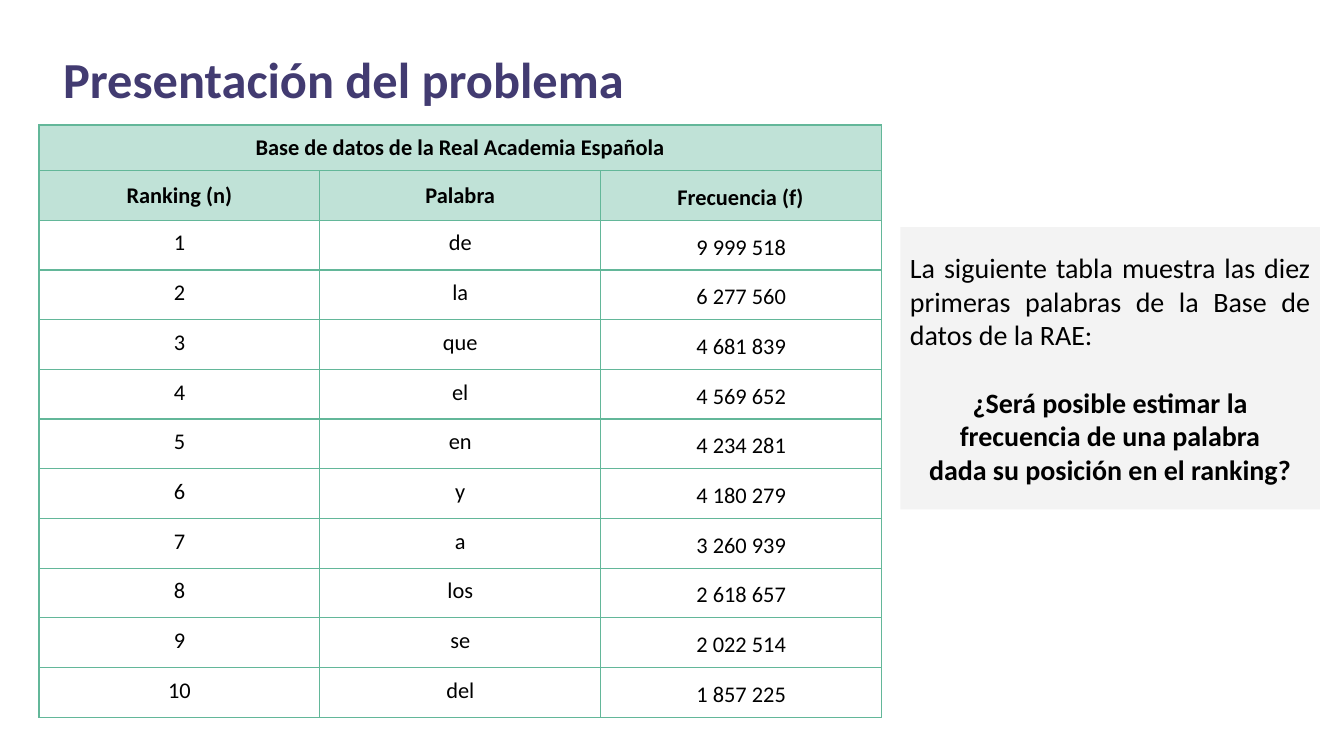
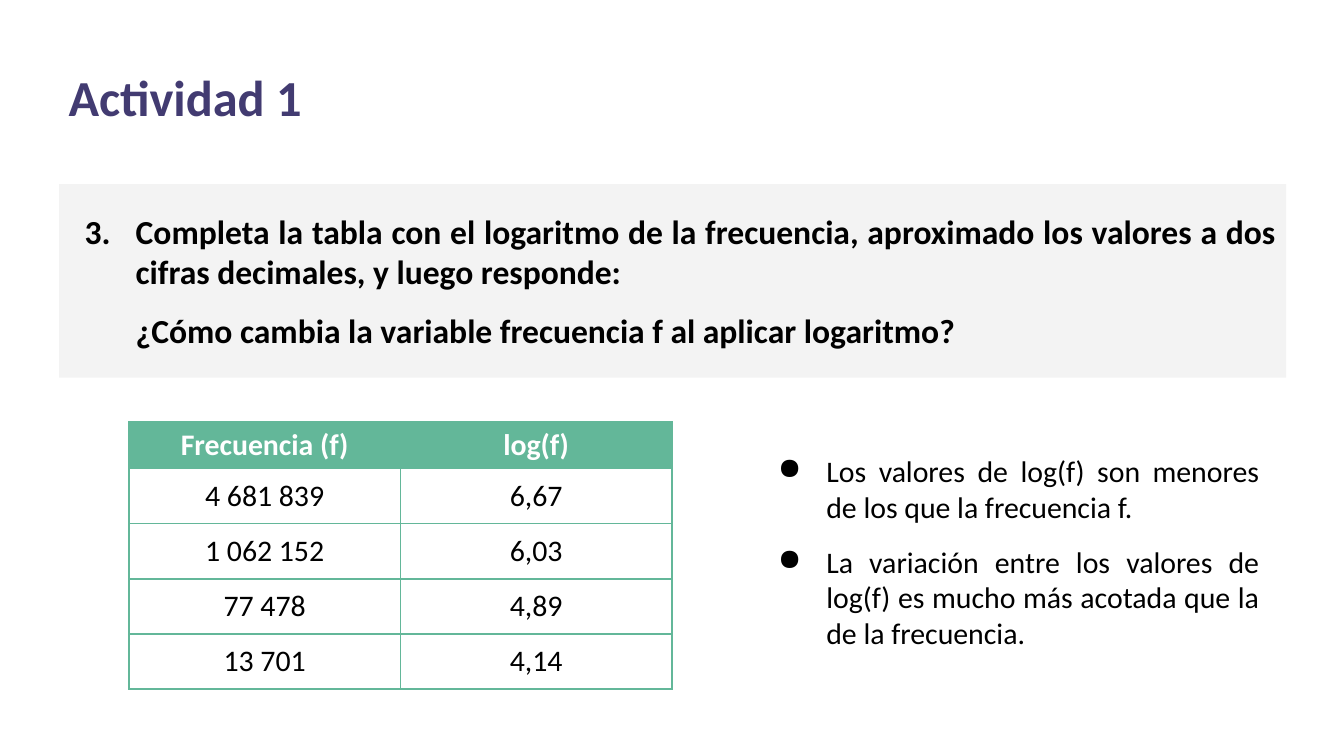
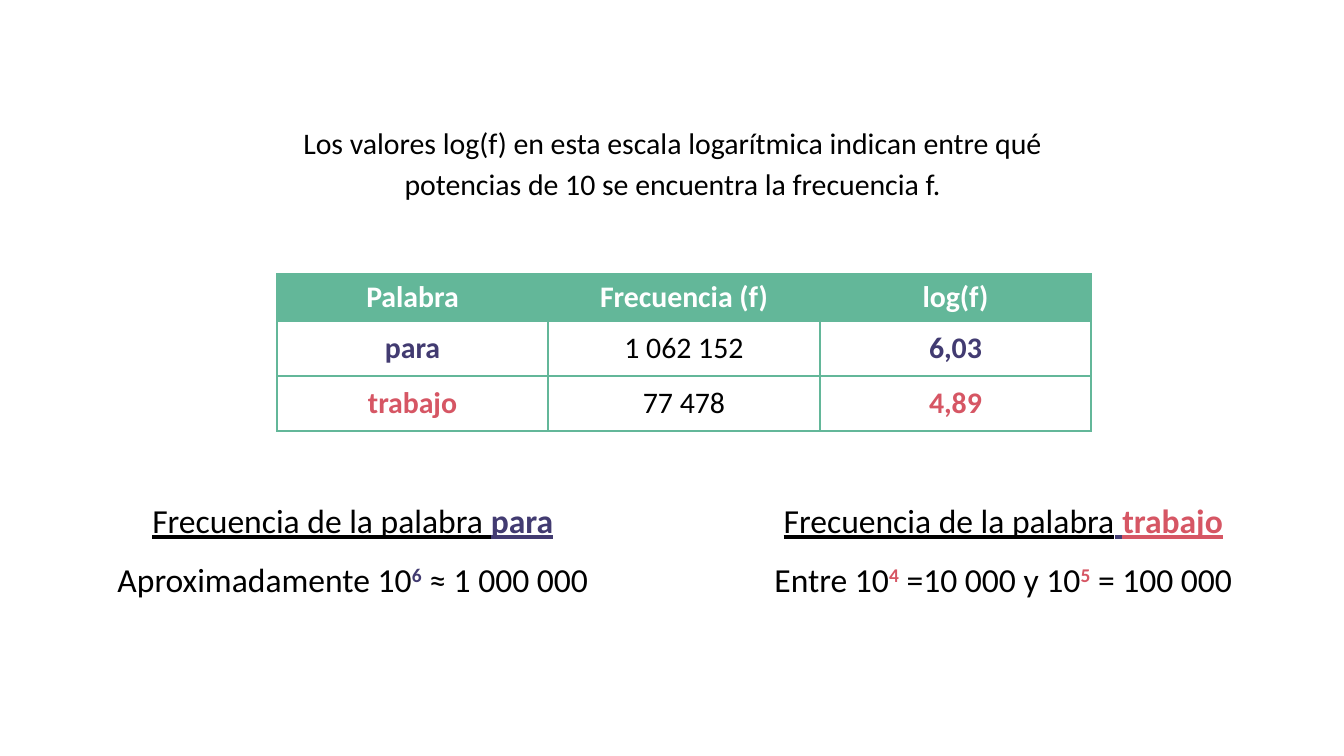
from dataclasses import dataclass
from typing import Optional

from lxml.etree import SubElement
from pptx import Presentation
from pptx.dml.color import RGBColor
from pptx.enum.shapes import MSO_SHAPE as Shape
from pptx.enum.text import MSO_ANCHOR as Anchor, MSO_AUTO_SIZE as AutoSize, PP_ALIGN as Align
from pptx.oxml.ns import qn
from pptx.util import Inches, Pt

# Shared look
COLORS = {
    "ink": "000000", "white": "FFFFFF", "panel": "F3F3F3", "purple": "423B71",
    "red": "D65664", "green": "63B799", "mint": "C0E2D7",
}
FONT = "Calibri"

# Square grid: 100 columns across a 16:9 slide
SLIDE_WIDTH = Inches(10)
SLIDE_HEIGHT = SLIDE_WIDTH * 9 // 16
GRID = SLIDE_WIDTH // 100


def grid(steps: float) -> int:
    return round(steps * GRID)


@dataclass(frozen=True)
class Area:
    left: float
    top: float
    width: float
    height: float

    def lengths(self) -> list[int]:
        return [grid(steps) for steps in (self.left, self.top, self.width, self.height)]


@dataclass(frozen=True)
class Span:
    text: str
    color: str = "ink"
    bold: bool = False
    underline: bool = False
    raised: bool = False


@dataclass(frozen=True)
class Para:
    spans: tuple[Span, ...]
    size: float
    align: Align = Align.LEFT
    before: float = 0
    after: float = 0
    line: Optional[float] = None
    indent: float = 0
    hanging: float = 0
    bullet: Optional[str] = None
    number: Optional[int] = None


@dataclass(frozen=True)
class Cell:
    para: Para
    fill: Optional[str] = None
    anchor: Anchor = Anchor.MIDDLE


@dataclass(frozen=True)
class TableStyle:
    column: float
    first_row: float
    other_rows: float
    margins: tuple[float, float]
    border: float


RANKING_STYLE = TableStyle(20.9, 2.7, 2.9, (0.7, 0.7), 0.75)
LOG_STYLE = TableStyle(20.2, 3.4, 4.1, (0.8, 0.4), 1)


def rgb(name: str) -> RGBColor:
    return RGBColor.from_string(COLORS[name])


# Text
def add_marker(para, content: Para) -> None:
    props = para._p.get_or_add_pPr()
    props.set("marL", str(grid(content.indent)))
    props.set("indent", str(-grid(content.hanging)))
    if content.bullet or content.number:
        tint = SubElement(props, qn("a:buClr"))
        SubElement(tint, qn("a:srgbClr"), val=COLORS["ink"])
    if content.bullet:
        SubElement(props, qn("a:buChar"), char=content.bullet)
    elif content.number:
        SubElement(props, qn("a:buAutoNum"), type="arabicPeriod", startAt=str(content.number))


def write_para(para, content: Para) -> None:
    add_marker(para, content)
    para.alignment = content.align
    para.space_before, para.space_after = Pt(content.before), Pt(content.after)
    if content.line:
        para.line_spacing = content.line
    para.text = content.spans[0].text
    for span in content.spans[1:]:
        para.add_run().text = span.text
    for run, span in zip(para.runs, content.spans):
        font = run.font
        font.name, font.size = FONT, Pt(content.size)
        font.bold, font.underline = span.bold, span.underline
        font.color.rgb = rgb(span.color)
        if span.raised:
            run._r.get_or_add_rPr().set("baseline", "30000")


def write_frame(frame, contents: list[Para], margins: tuple[float, float]) -> None:
    frame.word_wrap = True
    frame.margin_left = frame.margin_right = grid(margins[0])
    frame.margin_top = frame.margin_bottom = grid(margins[1])
    for index, content in enumerate(contents):
        write_para(frame.add_paragraph() if index else frame.paragraphs[0], content)


def add_text(page, area: Area, contents: list[Para], margins: tuple[float, float] = (1, 1)) -> None:
    box = page.shapes.add_textbox(*area.lengths())
    write_frame(box.text_frame, contents, margins)
    box.text_frame.auto_size = AutoSize.SHAPE_TO_FIT_TEXT


def add_title(page, left: float, top: float, text: str) -> None:
    title = Para((Span(text, "purple", bold=True),), 27)
    add_text(page, Area(left, top, 67, 5.3), [title], (0.7, 0.4))


def add_panel(page, area: Area, contents: list[Para]) -> None:
    panel = page.shapes.add_shape(Shape.RECTANGLE, *area.lengths())
    panel.shadow.inherit = False
    panel.fill.solid()
    panel.fill.fore_color.rgb = rgb("panel")
    panel.line.fill.background()
    write_frame(panel.text_frame, contents, (0.7, 0.7))
    panel.text_frame.vertical_anchor = Anchor.MIDDLE


# Tables
def add_borders(cell, width: float) -> None:
    props = cell._tc.get_or_add_tcPr()
    for side in ("lnL", "lnR", "lnT", "lnB"):
        line = SubElement(props, qn(f"a:{side}"), w=str(Pt(width)))
        fill = SubElement(line, qn("a:solidFill"))
        SubElement(fill, qn("a:srgbClr"), val=COLORS["green"])


def add_table(page, left: float, top: float, rows: list[list[Optional[Cell]]], style: TableStyle):
    count = len(rows[0])
    height = style.first_row + style.other_rows * (len(rows) - 1)
    area = Area(left, top, style.column * count, height)
    table = page.shapes.add_table(len(rows), count, *area.lengths()).table
    table.first_row = table.horz_banding = False
    for column in table.columns:
        column.width = grid(style.column)
    for r, row in enumerate(rows):
        table.rows[r].height = grid(style.other_rows if r else style.first_row)
        for c, content in enumerate(row):
            cell = table.cell(r, c)
            add_borders(cell, style.border)
            if content is None:
                continue
            if content.fill:
                cell.fill.solid()
                cell.fill.fore_color.rgb = rgb(content.fill)
            else:
                cell.fill.background()
            cell.vertical_anchor = content.anchor
            cell.margin_left = cell.margin_right = grid(style.margins[0])
            cell.margin_top = cell.margin_bottom = grid(style.margins[1])
            write_para(cell.text_frame.paragraphs[0], content.para)
    return table


def add_log_table(page, left: float, top: float, heads: list[str], body: list[list[Span]]) -> None:
    def centred(span: Span, fill: Optional[str] = None) -> Cell:
        return Cell(Para((span,), 16, Align.CENTER), fill)

    header = [centred(Span(head, "white", bold=True), "green") for head in heads]
    add_table(page, left, top, [header] + [[centred(span) for span in row] for row in body], LOG_STYLE)


# Slide 1: the problem and the ranking
WORDS = [
    ("de", "9 999 518"), ("la", "6 277 560"), ("que", "4 681 839"), ("el", "4 569 652"),
    ("en", "4 234 281"), ("y", "4 180 279"), ("a", "3 260 939"), ("los", "2 618 657"),
    ("se", "2 022 514"), ("del", "1 857 225"),
]


def ranking_head(text: str) -> Cell:
    return Cell(Para((Span(text, bold=True),), 12, Align.CENTER), "mint")


def ranking_value(text: str, line: Optional[float] = None) -> Cell:
    return Cell(Para((Span(text),), 12, Align.CENTER, line=line), anchor=Anchor.TOP)


def build_problem(page) -> None:
    intro = "La siguiente tabla muestra las diez primeras palabras de la Base de datos de la RAE:"
    question = Span("¿Será posible estimar la frecuencia de una palabra", bold=True)
    condition = Span("dada su posición en el ranking?", bold=True)
    add_panel(page, Area(67, 16.9, 31.2, 21), [
        Para((Span(intro),), 15, Align.JUSTIFY),
        Para((question,), 15, Align.CENTER, before=18),
        Para((condition,), 15, Align.CENTER),
    ])
    add_title(page, 4, 3.2, "Presentación del problema")
    frequency = Para((Span("Frecuencia (f)", bold=True),), 12, line=1.15, indent=5)
    rows = [
        [ranking_head("Base de datos de la Real Academia Española"), None, None],
        [ranking_head("Ranking (n)"), ranking_head("Palabra"), Cell(frequency, "mint", Anchor.TOP)],
    ]
    for rank, (word, count) in enumerate(WORDS, start=1):
        rows.append([ranking_value(str(rank)), ranking_value(word), ranking_value(count, 1.15)])
    table = add_table(page, 2.9, 9.3, rows, RANKING_STYLE)
    table.cell(0, 0).merge(table.cell(0, 2))


# Slide 2: activity with logarithms
def build_activity(page) -> None:
    task = ("Completa la tabla con el logaritmo de la frecuencia, aproximado los valores "
            "a dos cifras decimales, y luego responde:")
    question = "¿Cómo cambia la variable frecuencia f al aplicar logaritmo?"
    add_panel(page, Area(4.4, 13.7, 91.3, 14.4), [
        Para((Span(task, bold=True),), 18, Align.JUSTIFY, indent=5, hanging=3.8, number=3),
        Para((Span(question, bold=True),), 18, Align.JUSTIFY, before=10, after=10, indent=5),
    ])
    add_title(page, 4.4, 4.5, "Actividad 1")
    logs = [("4 681 839", "6,67"), ("1 062 152", "6,03"), ("77 478", "4,89"), ("13 701", "4,14")]
    add_log_table(page, 9.6, 31.4, ["Frecuencia (f)", "log(f)"],
                  [[Span(text) for text in row] for row in logs])
    findings = [
        "Los valores de log(f) son menores de los que la frecuencia f.",
        "La variación entre los valores de log(f) es mucho más acotada que la de la frecuencia.",
    ]
    add_text(page, Area(55.5, 32.7, 39.2, 16.9), [
        Para((Span(text),), 16, Align.JUSTIFY, before=10 * index, after=10 * index,
             indent=5, hanging=3.6, bullet="●")
        for index, text in enumerate(findings)
    ])


# Slide 3: reading the logarithmic scale
def add_estimate(page, left: float, width: float, heading: tuple[Span, ...], estimate: tuple[Span, ...]) -> None:
    add_text(page, Area(left, 36.2, width, 9.5), [
        Para(heading, 18, Align.CENTER),
        Para(estimate, 18, Align.CENTER, before=10),
    ])


def exponent(text: str, color: str) -> Span:
    return Span(text, color, bold=True, raised=True)


def build_scale(page) -> None:
    reading = ("Los valores log(f) en esta escala logarítmica indican entre qué potencias "
               "de 10 se encuentra la frecuencia f.")
    add_text(page, Area(20.3, 7.9, 59.5, 7.8), [Para((Span(reading),), 16, Align.CENTER, line=1.15)])
    words = [("para", "1 062 152", "6,03", "purple"), ("trabajo", "77 478", "4,89", "red")]
    add_log_table(page, 20.6, 20.4, ["Palabra", "Frecuencia (f)", "log(f)"], [
        [Span(word, color, bold=True), Span(count), Span(log, color, bold=True)]
        for word, count, log, color in words
    ])
    add_estimate(
        page, 6.5, 39.5,
        (Span("Frecuencia de la palabra ", underline=True),
         Span("para", "purple", bold=True, underline=True)),
        (Span("Aproximadamente 10"), exponent("6", "purple"), Span(" ≈ 1 000 000")),
    )
    add_estimate(
        page, 55.4, 38.5,
        (Span("Frecuencia de la palabra", underline=True), Span(" ", "purple", underline=True),
         Span("trabajo", "red", bold=True, underline=True)),
        (Span("Entre 10"), exponent("4", "red"), Span(" =10 000 y 10"),
         exponent("5", "red"), Span(" = 100 000")),
    )


def main() -> None:
    deck = Presentation()
    deck.slide_width, deck.slide_height = SLIDE_WIDTH, SLIDE_HEIGHT
    for build in (build_problem, build_activity, build_scale):
        build(deck.slides.add_slide(deck.slide_layouts[6]))
    deck.save("out.pptx")


if __name__ == "__main__":
    main()
